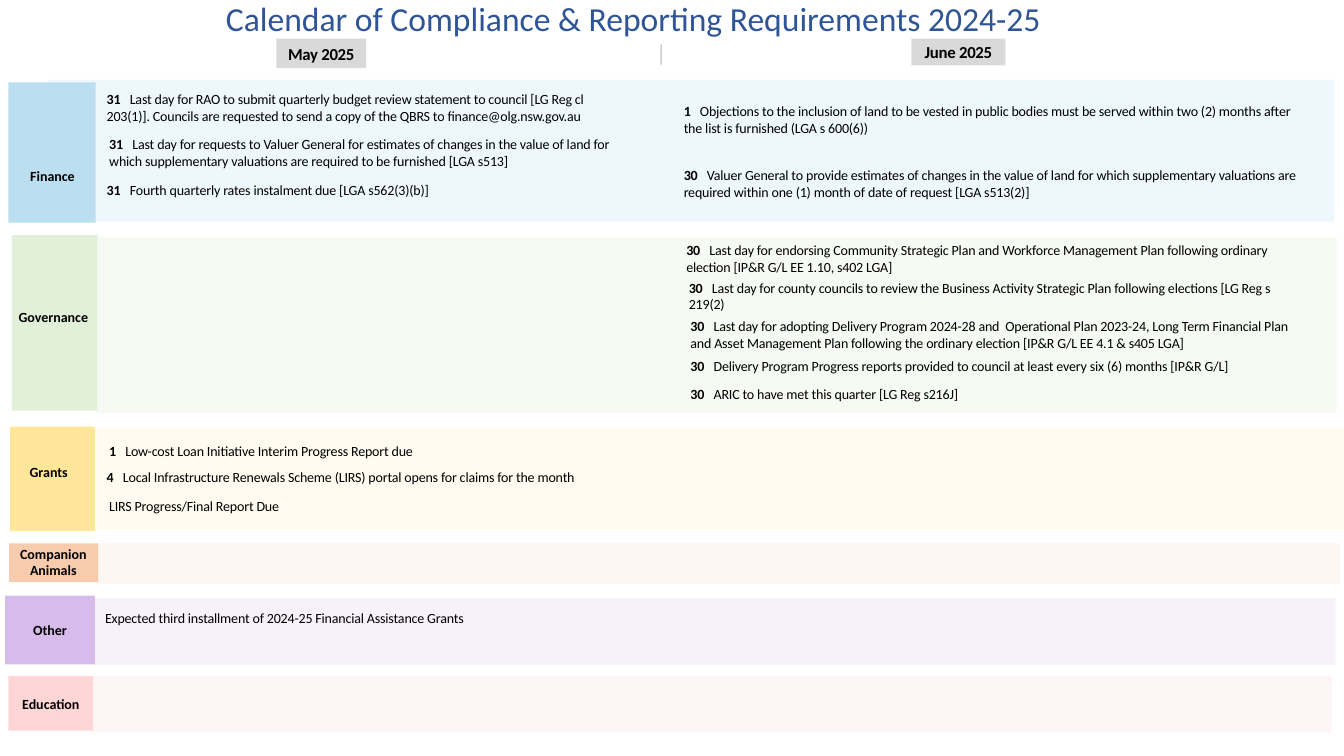
from lxml import etree
from pptx import Presentation
from pptx.dml.color import RGBColor
from pptx.enum.shapes import MSO_CONNECTOR, MSO_SHAPE
from pptx.enum.text import MSO_ANCHOR, MSO_AUTO_SIZE, PP_ALIGN
from pptx.oxml.ns import qn
from pptx.util import Emu, Pt

RECTANGLE = MSO_SHAPE.RECTANGLE
STRAIGHT = MSO_CONNECTOR.STRAIGHT
MIDDLE = MSO_ANCHOR.MIDDLE
TOP = MSO_ANCHOR.TOP
GROW = MSO_AUTO_SIZE.SHAPE_TO_FIT_TEXT
LEFT, CENTER = PP_ALIGN.LEFT, PP_ALIGN.CENTER

CELL = 76200
COLUMNS, ROWS = 160, 90
LINE_ROWS = 2.03
FONT = "Calibri"
BAND_OPACITY, DIVIDER_OPACITY = 20, 30

BLACK = RGBColor(0x00, 0x00, 0x00)
TITLE_BLUE = RGBColor(0x2F, 0x55, 0x97)
MONTH_GREY = RGBColor(0xD9, 0xD9, 0xD9)
FINANCE_BAND, FINANCE_TAB = RGBColor(0xAD, 0xD8, 0xED), RGBColor(0xBB, 0xDE, 0xF0)
GOVERNANCE_BAND, GOVERNANCE_TAB = RGBColor(0xD3, 0xE8, 0xC6), RGBColor(0xE2, 0xF0, 0xD9)
GRANTS_BAND, GRANTS_TAB = RGBColor(0xFF, 0xEC, 0xB7), RGBColor(0xFF, 0xE6, 0x99)
ANIMALS_BAND, ANIMALS_TAB = RGBColor(0xF9, 0xD5, 0xBD), RGBColor(0xF8, 0xCB, 0xAD)
OTHER_BAND, OTHER_TAB = RGBColor(0xD7, 0xBC, 0xEA), RGBColor(0xD6, 0xBB, 0xEB)
EDUCATION = RGBColor(0xFE, 0xD6, 0xD6)

# Each category: name, band colour and area, tab colour and area, label area.
CATEGORIES = [
    ("Finance", FINANCE_BAND, (5.8, 9.5, 153, 16.9),
     FINANCE_TAB, (1, 9.8, 10.4, 16.7), (-0.1, 19.8, 12.7, 2.4)),
    ("Governance", GOVERNANCE_BAND, (11.4, 28.2, 147.7, 21),
     GOVERNANCE_TAB, (1.4, 28, 10.2, 20.9), (0, 36.7, 12.7, 2)),
    ("Grants", GRANTS_BAND, (7.2, 50.9, 153, 12.2),
     GRANTS_TAB, (1.2, 50.8, 10.1, 12.4), (0.5, 55.1, 10.6, 2.2)),
    ("Companion Animals", ANIMALS_BAND, (11.3, 64.7, 148.2, 4.8),
     ANIMALS_TAB, (1.1, 64.7, 10.6, 4.6), (0, 65.2, 12.7, 3.4)),
    ("Other", OTHER_BAND, (11.2, 71.2, 147.8, 8),
     OTHER_TAB, (0.6, 70.9, 10.7, 8.2), None),
    ("Education", EDUCATION, (10.8, 80.5, 147.8, 6.7),
     EDUCATION, (1, 80.5, 10.1, 6.5), None),
]

MONTHS = [("May 2025", (32.9, 4.6, 10.7, 3.5)), ("June 2025", (108.5, 4.6, 11.2, 3.2))]

# Each entry: left, top, width, lines, day, requirement.
ENTRIES = [
    (12.7, 10.8, 59.5, 2, "31", "Last day for RAO to submit quarterly budget review statement to council "
     "[LG Reg cl 203(1)]. Councils are requested to send a copy of the QBRS to finance@olg.nsw.gov.au"),
    (13, 16.1, 62.3, 2, "31", "Last day for requests to Valuer General for estimates of changes in the value "
     "of land for which supplementary valuations are required to be furnished [LGA s513]"),
    (12.7, 21.6, 40.4, 1, "31", "Fourth quarterly rates instalment due [LGA s562(3)(b)]"),
    (81.4, 12.2, 72.8, 2, "1", "Objections to the inclusion of land to be vested in public bodies must be "
     "served within two (2) months after the list is furnished (LGA s 600(6))"),
    (81.4, 19.8, 73.8, 2, "30", "Valuer General to provide estimates of changes in the value of land for which "
     "supplementary valuations are required within one (1) month of date of request [LGA s513(2)]"),
    (81.7, 28.7, 73.1, 2, "30", "Last day for endorsing Community Strategic Plan and Workforce Management Plan "
     "following ordinary election [IP&R G/L EE 1.10, s402 LGA]"),
    (82, 33.2, 73.1, 2, "30", "Last day for county councils to review the Business Activity Strategic Plan "
     "following elections [LG Reg s 219(2)"),
    (82.2, 37.8, 73.2, 2, "30", "Last day for adopting Delivery Program 2024-28 and  Operational Plan 2023-24, "
     "Long Term Financial Plan and Asset Management Plan following the ordinary election "
     "[IP&R G/L EE 4.1 & s405 LGA]"),
    (82.2, 42.5, 69.5, 1, "30", "Delivery Program Progress reports provided to council at least every "
     "six (6) months [IP&R G/L]"),
    (82.2, 45.9, 70.3, 1, "30", "ARIC to have met this quarter [LG Reg s216J]"),
    (13, 52.7, 43.4, 1, "1", "Low-cost Loan Initiative Interim Progress Report due"),
    (12.7, 55.8, 62.8, 1, "4", "Local Infrastructure Renewals Scheme (LIRS) portal opens for claims for the month"),
    (13, 59.2, 32.4, 1, "", "LIRS Progress/Final Report Due"),
    (12.5, 72.6, 61.6, 1, "", "Expected third installment of 2024-25 Financial Assistance Grants"),
]


def grid(*cells):
    """Turn grid cells into slide lengths."""
    return [Emu(round(cell * CELL)) for cell in cells]


def set_opacity(owner, percent):
    """Make the colour inside an element partly transparent."""
    colour = owner.find(".//" + qn("a:srgbClr"))
    etree.SubElement(colour, qn("a:alpha")).set("val", str(percent * 1000))


def style_run(run, size, bold=False, colour=BLACK, spacing=0):
    """Set the font of a run."""
    run.font.name, run.font.size = FONT, Pt(size)
    run.font.bold, run.font.color.rgb = bold, colour
    if spacing:
        run._r.get_or_add_rPr().set("spc", str(spacing))


def prepare_frame(frame, anchor=MIDDLE, wrap=True, margin=0):
    """Set anchor, wrapping and margins of a text frame."""
    frame.word_wrap, frame.vertical_anchor = wrap, anchor
    frame.margin_left = frame.margin_right = margin
    frame.margin_top = frame.margin_bottom = margin


def write_centred(frame, text, size=10, **font):
    """Write one centred paragraph."""
    paragraph = frame.paragraphs[0]
    paragraph.text, paragraph.alignment = text, CENTER
    style_run(paragraph.runs[0], size, **font)


def add_block(slide, area, colour, opacity=100):
    """Add a plain coloured rectangle."""
    block = slide.shapes.add_shape(RECTANGLE, *grid(*area))
    block.shadow.inherit = False
    block.fill.solid()
    block.fill.fore_color.rgb = colour
    block.line.fill.background()
    if opacity < 100:
        set_opacity(block._element.spPr, opacity)
    return block


def add_tab(slide, name, colour, area, label_area):
    """Add a category tab with its name."""
    tab = add_block(slide, area, colour)
    label = slide.shapes.add_textbox(*grid(*label_area)) if label_area else tab
    prepare_frame(label.text_frame)
    write_centred(label.text_frame, name, bold=True)


def add_month(slide, name, area):
    """Add a month heading."""
    heading = add_block(slide, area, MONTH_GREY)
    prepare_frame(heading.text_frame, wrap=False)
    write_centred(heading.text_frame, name, 12, bold=True, spacing=-20)


def add_divider(slide, column, top, bottom):
    """Add the faint rule between the months."""
    divider = slide.shapes.add_connector(STRAIGHT, *grid(column, top, column, bottom))
    divider.line.color.rgb, divider.line.width = BLACK, Pt(0.75)
    properties = divider._element.spPr
    set_opacity(properties, DIVIDER_OPACITY)
    etree.SubElement(properties, qn("a:effectLst"))


def add_title(slide, text, area):
    """Add the slide title."""
    title = slide.shapes.add_textbox(*grid(*area))
    prepare_frame(title.text_frame, TOP, margin=Pt(3.6))
    title.text_frame.auto_size = GROW
    write_centred(title.text_frame, text, 24, colour=TITLE_BLUE)


def add_entry(slide, left, top, width, lines, day, requirement):
    """Add a requirement, led by its day when it has one."""
    entry = slide.shapes.add_textbox(*grid(left, top, width, lines * LINE_ROWS))
    prepare_frame(entry.text_frame)
    entry.text_frame.auto_size = GROW
    paragraph = entry.text_frame.paragraphs[0]
    paragraph.alignment = LEFT
    if day:
        stops = etree.SubElement(paragraph._p.get_or_add_pPr(), qn("a:tabLst"))
        position = grid(1.1 + 0.83 * len(day))[0]
        etree.SubElement(stops, qn("a:tab"), pos=str(position), algn="l")
        day_run = paragraph.add_run()
        day_run.text = day + "\t"
        style_run(day_run, 10, bold=True, spacing=-10)
    requirement_run = paragraph.add_run()
    requirement_run.text = requirement
    style_run(requirement_run, 10, spacing=-10)


def main():
    """Build the compliance calendar slide."""
    deck = Presentation()
    deck.slide_width, deck.slide_height = grid(COLUMNS, ROWS)
    slide = deck.slides.add_slide(deck.slide_layouts[6])
    for _, band_colour, band_area, *_ in CATEGORIES:
        add_block(slide, band_area, band_colour, BAND_OPACITY)
    for name, _, _, tab_colour, tab_area, label_area in CATEGORIES:
        add_tab(slide, name, tab_colour, tab_area, label_area)
    for name, area in MONTHS:
        add_month(slide, name, area)
    add_divider(slide, 78.7, 5.3, 7.7)
    add_title(slide, "Calendar of Compliance & Reporting Requirements 2024-25", (24, -0.8, 102.8, 6))
    for entry in ENTRIES:
        add_entry(slide, *entry)
    deck.save("out.pptx")


if __name__ == "__main__":
    main()
